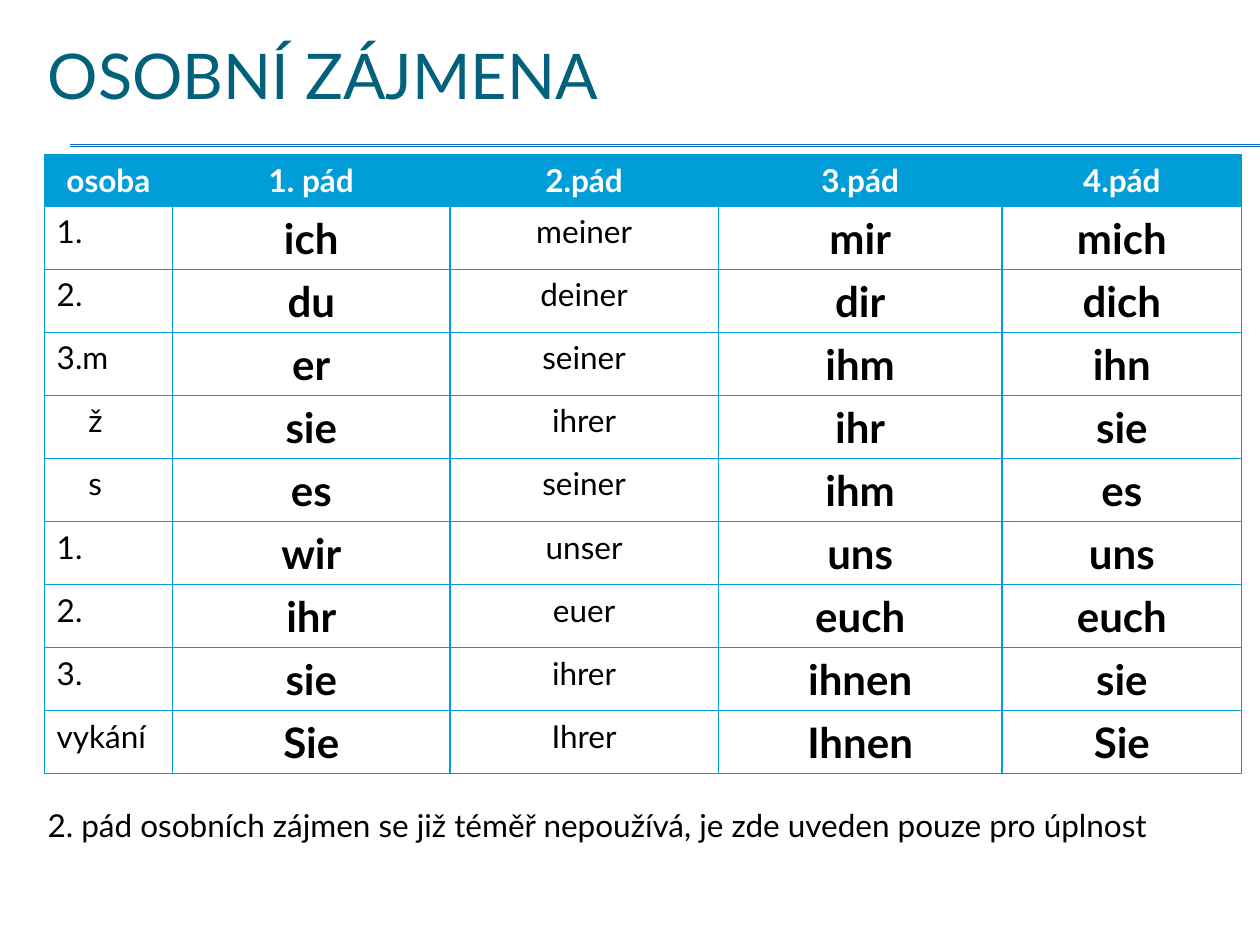
from pptx import Presentation
from pptx.dml.color import RGBColor
from pptx.enum.shapes import MSO_CONNECTOR
from pptx.enum.text import MSO_ANCHOR, PP_ALIGN
from pptx.oxml.ns import qn
from pptx.util import Cm, Pt
from lxml.etree import SubElement

FONT = "Lato"
COLORS = {
    "title": "04617B",
    "rule": "0F6FC6",
    "table": "009DD9",
    "header_text": "FFFFFF",
    "text": "000000",
}
HEADERS = ["osoba", "1. pád", "2.pád", "3.pád", "4.pád"]
PRONOUNS = [
    ["1.", "ich", "meiner", "mir", "mich"],
    ["2.", "du", "deiner", "dir", "dich"],
    ["3.m", "er", "seiner", "ihm", "ihn"],
    ["ž", "sie", "ihrer", "ihr", "sie"],
    ["s", "es", "seiner", "ihm", "es"],
    ["1.", "wir", "unser", "uns", "uns"],
    ["2.", "ihr", "euer", "euch", "euch"],
    ["3.", "sie", "ihrer", "ihnen", "sie"],
    ["vykání", "Sie", "Ihrer", "Ihnen", "Sie"],
]
GENDERS = {"ž", "s"}  # indented under the third person
COLUMN_WIDTHS = [2.59, 5.59, 5.41, 5.72, 4.83]
HEADER_HEIGHT, ROW_HEIGHT = 1.04, 1.27


def rgb(name):
    return RGBColor.from_string(COLORS[name])


def write(frame, text, size, color, bold=False, align=PP_ALIGN.LEFT):
    frame.text = text
    paragraph = frame.paragraphs[0]
    paragraph.alignment = align
    font = paragraph.font
    font.name, font.size, font.bold = FONT, Pt(size), bold
    font.color.rgb = rgb(color)


def add_title(slide, text):
    title = slide.shapes.title
    title.left, title.top, title.width, title.height = Cm(0.71), Cm(0.33), Cm(24.13), Cm(2.34)
    write(title.text_frame, text, 36, "title")
    title.text_frame.vertical_anchor = MSO_ANCHOR.MIDDLE


def add_rule(slide, y):
    rule = slide.shapes.add_connector(MSO_CONNECTOR.STRAIGHT, Cm(1.42), Cm(y), Cm(25.4), Cm(y))
    rule.line.color.rgb = rgb("rule")
    rule.line.width = Pt(0.75)
    SubElement(rule._element.spPr, qn("a:effectLst"))


def add_borders(cell):
    properties = cell._tc.get_or_add_tcPr()
    for side in ("a:lnL", "a:lnR", "a:lnT", "a:lnB"):
        border = SubElement(properties, qn(side), w=str(Pt(0.79)))
        fill = SubElement(border, qn("a:solidFill"))
        SubElement(fill, qn("a:srgbClr"), val=COLORS["table"])


def fill_cell(cell, text, row, column):
    add_borders(cell)
    if row == 0:
        cell.fill.solid()
        cell.fill.fore_color.rgb = rgb("table")
        write(cell.text_frame, text, 18, "header_text", True, PP_ALIGN.CENTER)
        return
    cell.fill.background()
    # The person and the rarely used second case stay small and light
    small = column in (0, 2)
    align = PP_ALIGN.LEFT if column == 0 else PP_ALIGN.CENTER
    write(cell.text_frame, text, 18 if small else 24, "text", not small, align)
    if column == 0 and text in GENDERS:
        cell.margin_left = Cm(0.89)


def add_pronoun_table(slide):
    rows = [HEADERS] + PRONOUNS
    heights = [HEADER_HEIGHT] + [ROW_HEIGHT] * len(PRONOUNS)
    table = slide.shapes.add_table(
        len(rows), len(HEADERS), Cm(0.89), Cm(3.12), Cm(sum(COLUMN_WIDTHS)), Cm(sum(heights))
    ).table
    for column, width in zip(table.columns, COLUMN_WIDTHS):
        column.width = Cm(width)
    for r, (texts, height) in enumerate(zip(rows, heights)):
        table.rows[r].height = Cm(height)
        for c, text in enumerate(texts):
            fill_cell(table.cell(r, c), text, r, c)


def add_note(slide, text):
    note = slide.shapes.add_textbox(Cm(0.71), Cm(16.13), Cm(24.69), Cm(1.02))
    note.text_frame.word_wrap = True
    write(note.text_frame, text, 18, "text")


def main():
    prs = Presentation()
    prs.slide_width, prs.slide_height = Cm(25.4), Cm(19.05)
    slide = prs.slides.add_slide(prs.slide_layouts[5])

    # Heading with its double rule
    for y in (2.92, 2.95):
        add_rule(slide, y)
    add_title(slide, "OSOBNÍ ZÁJMENA")

    # Declension table and remark
    add_pronoun_table(slide)
    add_note(slide, "2. pád osobních zájmen se již téměř nepoužívá, je zde uveden pouze pro úplnost")

    prs.save("out.pptx")


if __name__ == "__main__":
    main()
